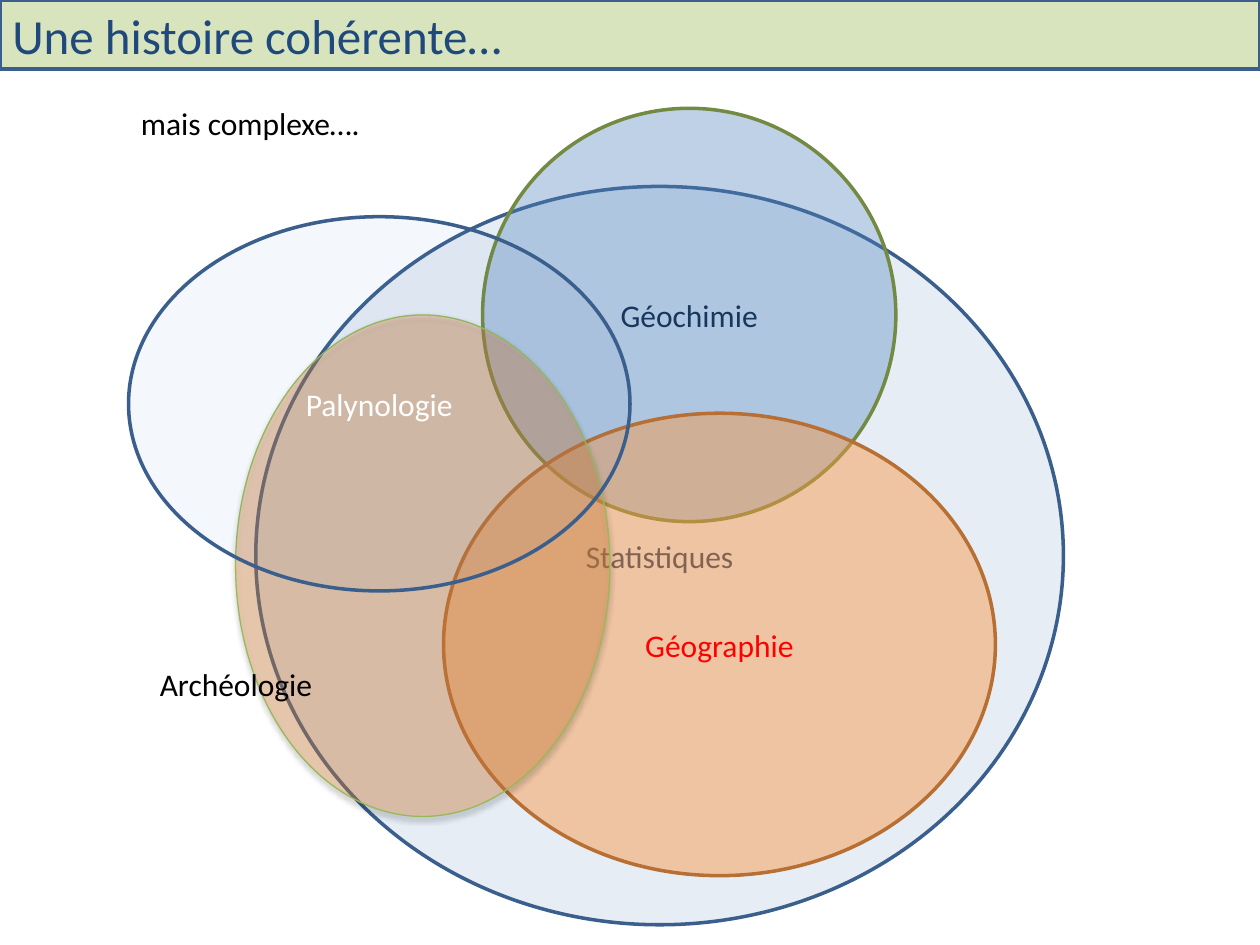
from lxml.etree import SubElement
from pptx import Presentation
from pptx.dml.color import RGBColor
from pptx.enum.shapes import MSO_SHAPE
from pptx.enum.text import MSO_ANCHOR, MSO_AUTO_SIZE, PP_ALIGN
from pptx.oxml.ns import qn
from pptx.util import Inches, Pt

BLACK = RGBColor(0x00, 0x00, 0x00)
WHITE = RGBColor(0xFF, 0xFF, 0xFF)
RED = RGBColor(0xFF, 0x00, 0x00)
BLUE = RGBColor(0x4F, 0x81, 0xBD)
BLUE_EDGE = RGBColor(0x3A, 0x5F, 0x8C)
NAVY = RGBColor(0x17, 0x37, 0x5E)
TITLE_BLUE = RGBColor(0x1F, 0x49, 0x7D)
PALE_GREEN = RGBColor(0xD7, 0xE4, 0xBD)
OLIVE_EDGE = RGBColor(0x73, 0x8A, 0x42)
GREEN_EDGE = RGBColor(0x98, 0xB9, 0x55)
ORANGE = RGBColor(0xF7, 0x96, 0x46)
ORANGE_EDGE = RGBColor(0xB7, 0x6F, 0x34)


class VennSlide:
    """Draws the title, labels and translucent ellipses of one slide."""

    font = "Calibri"
    label_size = 18
    title_size = 28

    def __init__(self, prs):
        self.s = prs.slides.add_slide(prs.slide_layouts[6])

    def set_text(self, tf, text, color, size, align):
        tf.text = text
        p = tf.paragraphs[0]
        p.alignment = align
        r = p.runs[0]
        r.font.name = self.font
        r.font.size = Pt(size)
        r.font.color.rgb = color

    def shape(self, kind, box, fill, edge, width):
        sp = self.s.shapes.add_shape(kind, *map(Inches, box))
        sp.shadow.inherit = False
        sp.fill.solid()
        sp.fill.fore_color.rgb = fill
        sp.line.color.rgb = edge
        sp.line.width = Pt(width)
        sp.text_frame.vertical_anchor = MSO_ANCHOR.MIDDLE
        return sp

    def title(self, text, box):
        sp = self.shape(MSO_SHAPE.RECTANGLE, box, PALE_GREEN, BLUE_EDGE, 2)
        self.set_text(sp.text_frame, text, TITLE_BLUE, self.title_size, PP_ALIGN.LEFT)

    def label(self, text, box):
        tf = self.s.shapes.add_textbox(*map(Inches, box)).text_frame
        tf.word_wrap = False
        tf.auto_size = MSO_AUTO_SIZE.SHAPE_TO_FIT_TEXT
        self.set_text(tf, text, BLACK, self.label_size, PP_ALIGN.LEFT)

    def ellipse(self, box, fill, opacity, edge, text="", color=NAVY, width=2):
        sp = self.shape(MSO_SHAPE.OVAL, box, fill, edge, width)
        rgb = sp._element.spPr.find(qn("a:solidFill"))[0]
        SubElement(rgb, qn("a:alpha"), val=str(opacity * 1000))
        if text:
            self.set_text(sp.text_frame, text, color, self.label_size, PP_ALIGN.CENTER)
        return sp

    def drop_shadow(self, sp, opacity, blur, distance):
        effects = sp._element.spPr.find(qn("a:effectLst"))
        shadow = SubElement(effects, qn("a:outerShdw"), blurRad=str(Pt(blur)),
                            dist=str(Pt(distance)), dir="5400000", rotWithShape="0")
        rgb = SubElement(shadow, qn("a:srgbClr"), val=str(BLACK))
        SubElement(rgb, qn("a:alpha"), val=str(opacity * 1000))


def main():
    prs = Presentation()
    prs.slide_width, prs.slide_height = Inches(10), Inches(7.5)
    venn = VennSlide(prs)
    venn.title("Une histoire cohérente…", (0, 0, 10, 0.55))
    venn.label("mais complexe….", (1.02, 0.78, 1.97, 0.4))
    venn.ellipse((2.03, 1.48, 6.41, 5.86), BLUE, 14, BLUE_EDGE, "Statistiques")
    venn.ellipse((3.83, 0.86, 3.28, 3.28), BLUE, 36, OLIVE_EDGE, "Géochimie")
    venn.ellipse((3.52, 3.28, 4.38, 3.67), ORANGE, 47, ORANGE_EDGE, "Géographie", RED)
    archaeology = venn.ellipse((1.87, 2.5, 2.97, 3.98), ORANGE, 33, GREEN_EDGE, width=0.75)
    venn.drop_shadow(archaeology, 38, 3.1, 1.6)
    venn.label("Archéologie", (1.17, 5.23, 1.43, 0.4))
    venn.ellipse((1.02, 1.72, 3.98, 2.97), BLUE, 6, BLUE_EDGE, "Palynologie", WHITE)
    prs.save("out.pptx")


if __name__ == "__main__":
    main()
